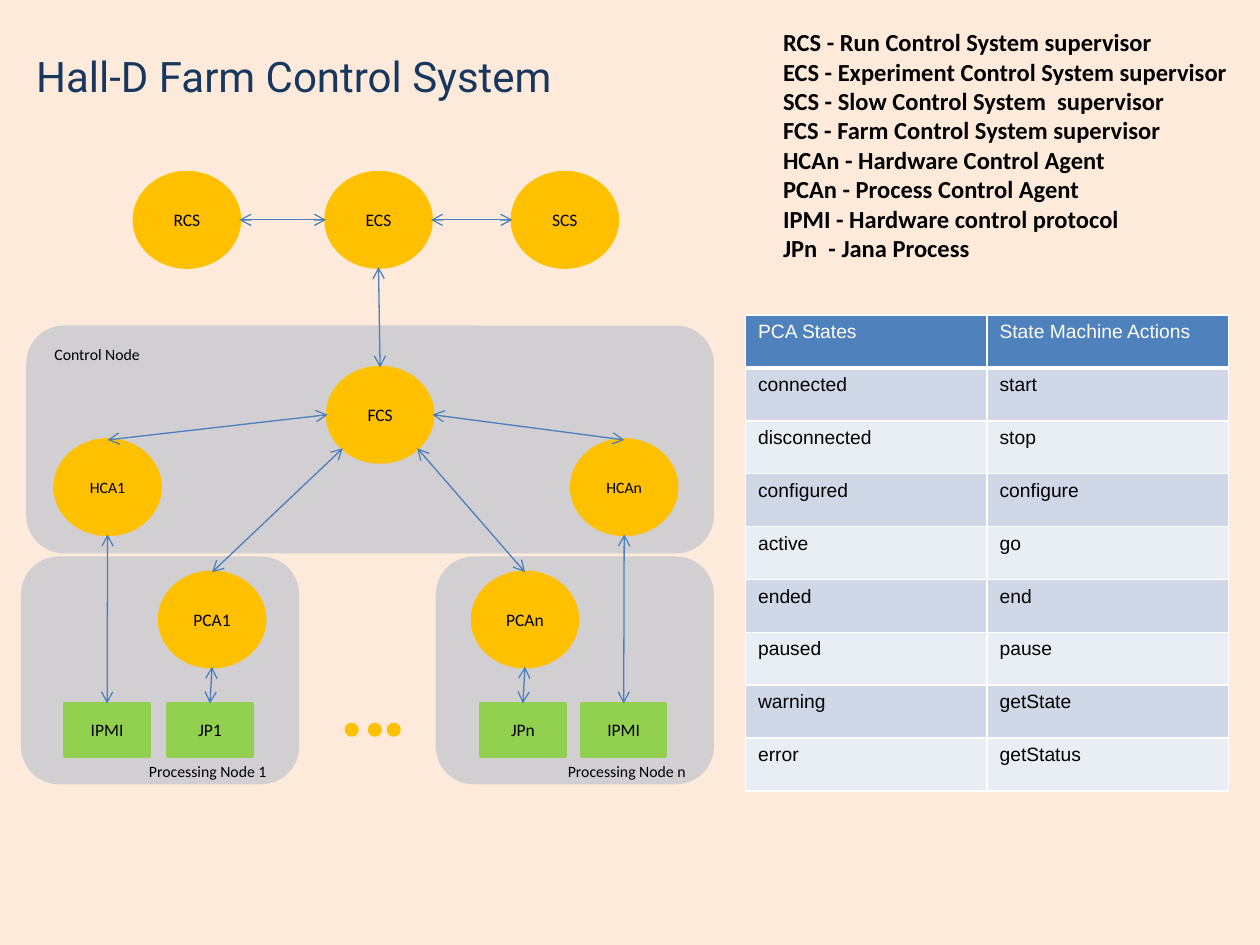
from lxml.etree import SubElement
from pptx import Presentation
from pptx.dml.color import RGBColor
from pptx.enum.shapes import MSO_CONNECTOR as Line, MSO_SHAPE as Shape
from pptx.enum.text import MSO_ANCHOR as Anchor, MSO_AUTO_SIZE as AutoSize, PP_ALIGN as Align
from pptx.oxml.ns import qn
from pptx.util import Inches, Pt

COLORS = {
    "background": "FDEADA", "panel": "4F81BD", "supervisor": "FFC000",
    "process": "92D050", "arrow": "4B7EBC", "title": "17375E",
    "text": "000000", "white": "FFFFFF", "odd": "D0D8E8", "even": "E9EDF4",
}
COLUMNS, ROWS = 120, 90
TOP, BOTTOM, LEFT, RIGHT = (0, -1), (0, 1), (-1, 0), (1, 0)
LOWER_LEFT, LOWER_RIGHT = (-0.71, 0.71), (0.71, 0.71)


def rgb(name):
    return RGBColor.from_string(COLORS[name])


class Diagram:
    font = "Calibri"
    line_width = 0.75

    def __init__(self, deck):
        self.slide = deck.slides.add_slide(deck.slide_layouts[6])
        self.column = deck.slide_width / COLUMNS
        self.row = deck.slide_height / ROWS
        self.slide.background.fill.solid()
        self.slide.background.fill.fore_color.rgb = rgb("background")

    def place(self, left, top, width, height):
        return (round(left * self.column), round(top * self.row),
                round(width * self.column), round(height * self.row))

    def add_words(self, paragraph, words, size, color="text", font=None, bold=False):
        run = paragraph.add_run()
        run.text = words
        run.font.size = Pt(size)
        run.font.name = font or self.font
        run.font.bold = bold
        run.font.color.rgb = rgb(color)

    def figure(self, kind, area, color):
        figure = self.slide.shapes.add_shape(kind, *self.place(*area))
        figure.shadow.inherit = False
        figure.fill.solid()
        figure.fill.fore_color.rgb = rgb(color)
        return figure

    def panel(self, *area):
        panel = self.figure(Shape.ROUNDED_RECTANGLE, area, "panel")
        panel.line.fill.background()
        tint = panel.element.spPr.find(qn("a:solidFill"))[0]
        SubElement(tint, qn("a:alpha"), val="25000")

    def node(self, kind, area, color, words="", size=10):
        node = self.figure(kind, area, color)
        node.line.color.rgb = rgb(color)
        node.line.width = Pt(2)
        if words:
            frame = node.text_frame
            frame.margin_left = frame.margin_right = 0
            frame.vertical_anchor = Anchor.MIDDLE
            frame.paragraphs[0].alignment = Align.CENTER
            self.add_words(frame.paragraphs[0], words, size)
        return node

    def agent(self, words, left, top, size=10):
        return self.node(Shape.OVAL, (left, top, 10, 9), "supervisor", words, size)

    def process(self, words, left):
        return self.node(Shape.RECTANGLE, (left, 67, 8, 5), "process", words)

    def dot(self, left):
        self.node(Shape.OVAL, (left, 69, 1, 1), "supervisor")

    def text(self, lines, area, size, color="text", font=None, bold=False,
             wrap=True, align=Align.LEFT, anchor=Anchor.TOP):
        frame = self.slide.shapes.add_textbox(*self.place(*area)).text_frame
        frame.word_wrap = wrap
        frame.auto_size = AutoSize.NONE
        frame.vertical_anchor = anchor
        for index, words in enumerate(lines):
            paragraph = frame.add_paragraph() if index else frame.paragraphs[0]
            paragraph.alignment = align
            self.add_words(paragraph, words, size, color, font, bold)

    def edge(self, node, side):
        across, down = side
        return (round(node.left + node.width * (1 + across) / 2),
                round(node.top + node.height * (1 + down) / 2))

    def link(self, start, start_side, end, end_side):
        link = self.slide.shapes.add_connector(
            Line.STRAIGHT, *self.edge(start, start_side), *self.edge(end, end_side))
        if end.auto_shape_type == Shape.RECTANGLE:
            link.end_connect(end, 0)
        link.line.color.rgb = rgb("arrow")
        link.line.width = Pt(self.line_width)
        outline = link.element.spPr.find(qn("a:ln"))
        for tip in ("a:headEnd", "a:tailEnd"):
            SubElement(outline, qn(tip), type="arrow")
        SubElement(link.element.spPr, qn("a:effectLst"))

    def border(self, cell, widths):
        properties = cell._tc.get_or_add_tcPr()
        for side, width in zip("LRTB", widths):
            line = SubElement(properties, qn(f"a:ln{side}"), w=str(int(Pt(width))))
            fill = SubElement(line, qn("a:solidFill"))
            SubElement(fill, qn("a:srgbClr"), val=COLORS["white"])

    def table(self, records, area):
        table = self.slide.shapes.add_table(
            len(records), len(records[0]), *self.place(*area)).table
        for r, record in enumerate(records):
            fill = ("odd" if r % 2 else "even") if r else "panel"
            for c, words in enumerate(record):
                cell = table.cell(r, c)
                self.border(cell, (1, 1, 3 if r == 1 else 1, 1 if r else 3))
                cell.fill.solid()
                cell.fill.fore_color.rgb = rgb(fill)
                self.add_words(cell.text_frame.paragraphs[0], words, 11,
                               "text" if r else "white", "Arial")


def main():
    deck = Presentation()
    deck.slide_width, deck.slide_height = Inches(10), Inches(7.5)
    farm = Diagram(deck)

    farm.panel(2.5, 31, 65.5, 21.7)
    for left in (2, 41.5):
        farm.panel(left, 53, 26.5, 21.7)

    farm.text(["Hall-D Farm Control System"], (2, 4, 52, 6.4), 24, "title",
              "Roboto", align=Align.CENTER, anchor=Anchor.MIDDLE)

    rcs, ecs, scs = [farm.agent(words, left, 16.44) for words, left in
                     (("RCS", 12.8), ("ECS", 31.05), ("SCS", 48.8))]
    fcs = farm.agent("FCS", 31.2, 35)
    farm.link(rcs, RIGHT, ecs, LEFT)
    farm.link(ecs, RIGHT, scs, LEFT)
    farm.link(fcs, TOP, ecs, BOTTOM)

    branches = (
        ("1", 5.25, 15.2, 6.2, 16, LEFT, LOWER_LEFT),
        ("n", 54.45, 45, 55.4, 45.8, RIGHT, LOWER_RIGHT),
    )
    for suffix, hca_left, pca_left, ipmi_left, jp_left, side, corner in branches:
        hca = farm.agent(f"HCA{suffix}", hca_left, 41.9, 9)
        pca = farm.agent(f"PCA{suffix}", pca_left, 54.5)
        ipmi = farm.process("IPMI", ipmi_left)
        jana = farm.process(f"JP{suffix}", jp_left)
        farm.link(fcs, side, hca, TOP)
        farm.link(fcs, corner, pca, TOP)
        farm.link(hca, BOTTOM, ipmi, TOP)
        farm.link(pca, BOTTOM, jana, TOP)

    for left in (33, 35.2, 37):
        farm.dot(left)

    for words, left, top, width in (("Control Node", 4, 32.2, 11.3),
                                    ("Processing Node 1", 13, 72, 14),
                                    ("Processing Node n", 52.9, 72, 14)):
        farm.text([words], (left, top, width, 3), 9, wrap=False)

    farm.table([
        ("PCA States", "State Machine Actions"),
        ("connected", "start"),
        ("disconnected", "stop"),
        ("configured", "configure"),
        ("active", "go"),
        ("ended", "end"),
        ("paused", "pause"),
        ("warning", "getState"),
        ("error", "getStatus"),
    ], (71, 30, 46, 45.36))

    farm.text([
        "RCS - Run Control System supervisor",
        "ECS - Experiment Control System supervisor",
        "SCS - Slow Control System  supervisor",
        "FCS - Farm Control System supervisor",
        "HCAn - Hardware Control Agent",
        "PCAn - Process Control Agent",
        "IPMI - Hardware control protocol",
        "JPn  - Jana Process",
    ], (73.4, 2, 45.6, 23.9), 14, bold=True)

    deck.save("out.pptx")


if __name__ == "__main__":
    main()
